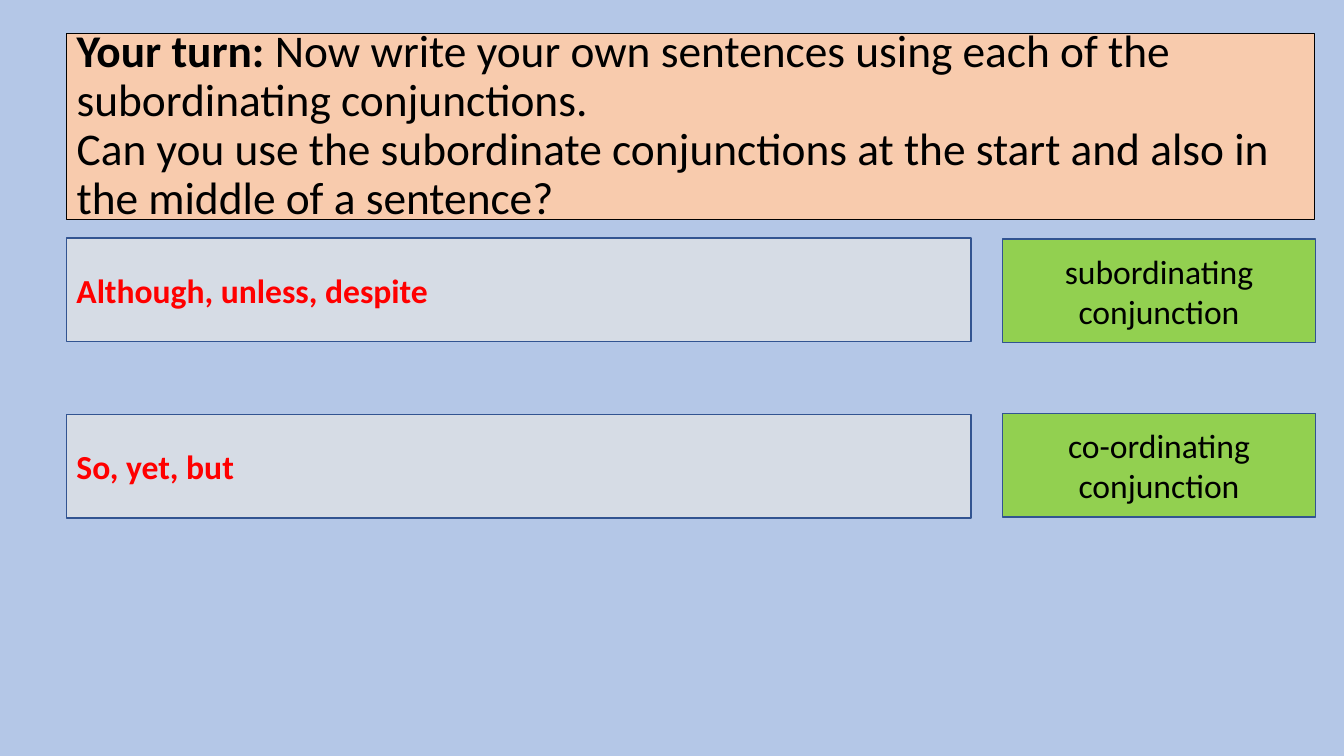
"""Build a slide asking pupils to write sentences with two kinds of conjunction."""
from dataclasses import dataclass

from pptx import Presentation
from pptx.dml.color import RGBColor
from pptx.enum.shapes import MSO_SHAPE
from pptx.enum.text import MSO_ANCHOR, MSO_AUTO_SIZE, PP_ALIGN
from pptx.util import Inches, Pt

RECTANGLE = MSO_SHAPE.RECTANGLE
MIDDLE = MSO_ANCHOR.MIDDLE
NO_FIT = MSO_AUTO_SIZE.NONE
LEFT, CENTER = PP_ALIGN.LEFT, PP_ALIGN.CENTER


@dataclass(frozen=True)
class Theme:
    font: str = "Calibri"
    background: str = "B4C7E7"
    task_fill: str = "F8CBAD"
    words_fill: str = "D6DCE5"
    label_fill: str = "92D050"
    outline: str = "325491"
    text: str = "000000"
    words: str = "FF0000"
    task_size: float = 32.4
    body_size: float = 24


THEME = Theme()


def style_box(box, fill, outline, width):
    box.fill.solid()
    box.fill.fore_color.rgb = RGBColor.from_string(fill)
    box.line.color.rgb = RGBColor.from_string(outline)
    box.line.width = Pt(width)
    frame = box.text_frame
    frame.word_wrap = True
    frame.auto_size = NO_FIT
    frame.vertical_anchor = MIDDLE


def style_paragraph(paragraph, size, color, align):
    paragraph.alignment = align
    paragraph.font.name = THEME.font
    paragraph.font.size = Pt(size)
    paragraph.font.color.rgb = RGBColor.from_string(color)


deck = Presentation()
deck.slide_width, deck.slide_height = Inches(13.33), Inches(7.5)
slide = deck.slides.add_slide(deck.slide_layouts[5])
slide.background.fill.solid()
slide.background.fill.fore_color.rgb = RGBColor.from_string(THEME.background)

task = slide.shapes.title
task.left, task.top = Inches(0.66), Inches(0.33)
task.width, task.height = Inches(12.38), Inches(1.85)
style_box(task, THEME.task_fill, THEME.text, 0.75)
instruction = task.text_frame.paragraphs[0]
style_paragraph(instruction, THEME.task_size, THEME.text, LEFT)
instruction.line_spacing = 0.9
lead = instruction.add_run()
lead.text = "Your turn:"
lead.font.bold = True
instruction.add_run().text = " Now write your own sentences using each of the subordinating conjunctions. "
instruction.add_line_break()
instruction.add_run().text = (
    "Can you use the subordinate conjunctions at the start and also in the middle of a sentence?"
)

words_column = (0.66, 8.97, THEME.words_fill, THEME.words, True, LEFT)
label_column = (9.94, 3.11, THEME.label_fill, THEME.text, False, CENTER)
boxes = [
    (words_column, 2.36, "Although, unless, despite"),
    (words_column, 4.11, "So, yet, but"),
    (label_column, 2.37, "subordinating\nconjunction"),
    (label_column, 4.1, "co-ordinating\nconjunction"),
]
for (left, width, fill, color, bold, align), top, wording in boxes:
    box = slide.shapes.add_shape(RECTANGLE, Inches(left), Inches(top), Inches(width), Inches(1.03))
    box.shadow.inherit = False
    style_box(box, fill, THEME.outline, 1)
    box.text_frame.text = wording
    for paragraph in box.text_frame.paragraphs:
        style_paragraph(paragraph, THEME.body_size, color, align)
        paragraph.font.bold = bold

deck.save("out.pptx")
